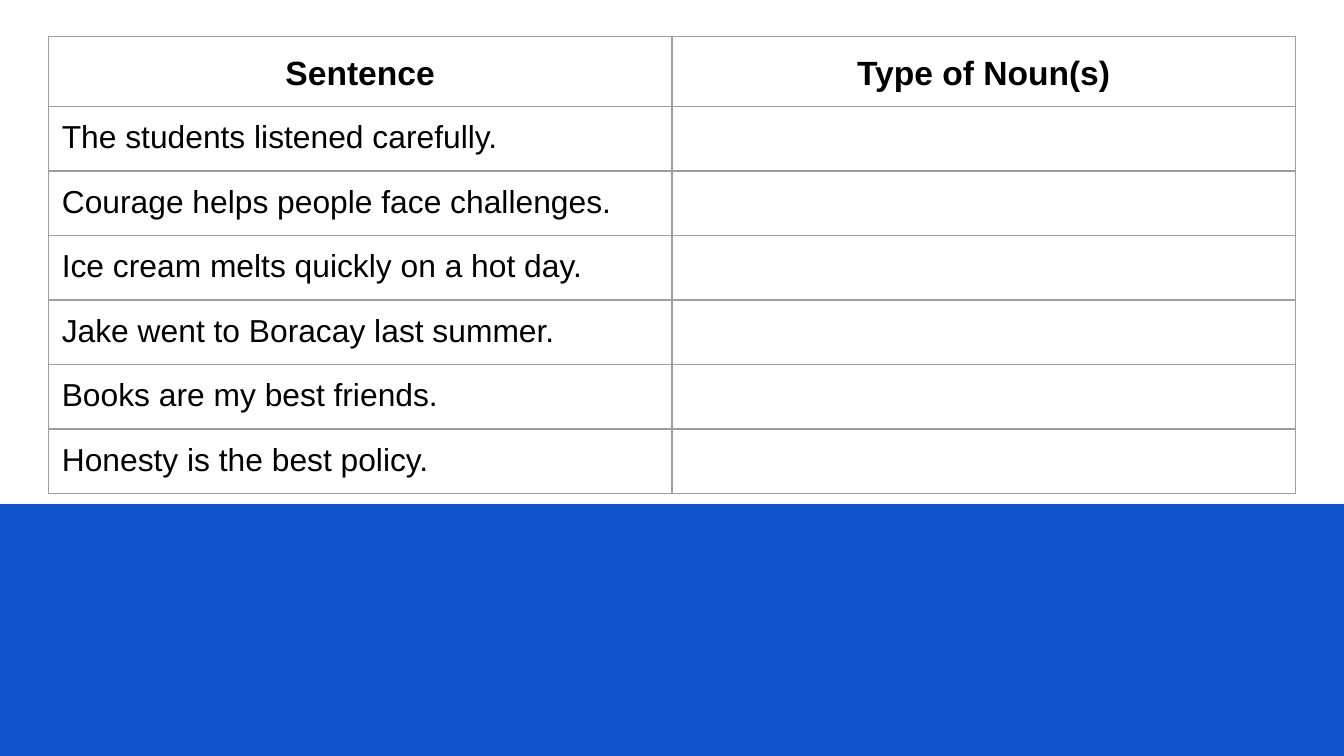
from lxml.etree import SubElement
from pptx import Presentation
from pptx.dml.color import RGBColor
from pptx.enum.shapes import MSO_SHAPE as Shape
from pptx.enum.text import MSO_ANCHOR as Anchor, PP_ALIGN as Align
from pptx.oxml.ns import qn
from pptx.util import Inches, Pt

BLUE = RGBColor(0x11, 0x55, 0xCC)
WHITE = RGBColor(0xFF, 0xFF, 0xFF)
BLACK = RGBColor(0, 0, 0)
GREY = RGBColor(0x9E, 0x9E, 0x9E)

# Slide (16:9) and table grid, in inches
WIDTH = 10
HEIGHT = WIDTH * 9 / 16
TABLE_LEFT, TABLE_TOP = 0.36, 0.27
COLUMN_WIDTH = WIDTH / 2 - TABLE_LEFT
HEADER_HEIGHT, ROW_HEIGHT = 0.52, 0.48

HEADERS = ("Sentence", "Type of Noun(s)")
SENTENCES = (
    "The students listened carefully.",
    "Courage helps people face challenges.",
    "Ice cream melts quickly on a hot day.",
    "Jake went to Boracay last summer.",
    "Books are my best friends.",
    "Honesty is the best policy.",
)

CELL_FORMAT = {f"margin_{side}": Inches(0.1) for side in ("left", "right", "top", "bottom")}
HEADER_PARAGRAPH = {"alignment": Align.CENTER, "line_spacing": 1.15}
HEADER_FONT = {"name": "Arial", "size": Pt(18), "bold": True}
BODY_PARAGRAPH = {"alignment": Align.LEFT}
BODY_FONT = {"name": "Arial", "size": Pt(17), "bold": False}


def apply_format(target, values):
    for name, value in values.items():
        setattr(target, name, value)


def add_band(slide, share):
    """Cover the top share of the slide with white."""
    band = slide.shapes.add_shape(Shape.RECTANGLE, 0, 0, Inches(WIDTH), Inches(HEIGHT * share))
    band.shadow.inherit = False
    band.fill.solid()
    band.fill.fore_color.rgb = WHITE
    band.line.fill.background()


def add_borders(cell):
    properties = cell._tc.get_or_add_tcPr()
    for side in ("lnL", "lnR", "lnT", "lnB"):
        line = SubElement(properties, qn(f"a:{side}"), w=str(Pt(0.75)))
        fill = SubElement(line, qn("a:solidFill"))
        SubElement(fill, qn("a:srgbClr"), val=str(GREY))


def write_cell(cell, text, paragraph_format, font_format):
    apply_format(cell, CELL_FORMAT)
    paragraph = cell.text_frame.paragraphs[0]
    apply_format(paragraph, paragraph_format)
    run = paragraph.add_run()
    run.text = text
    apply_format(run.font, font_format)
    run.font.color.rgb = BLACK


def add_noun_table(slide):
    row_count = len(SENTENCES) + 1
    table_height = HEADER_HEIGHT + ROW_HEIGHT * len(SENTENCES)
    table = slide.shapes.add_table(
        row_count, len(HEADERS), Inches(TABLE_LEFT), Inches(TABLE_TOP),
        Inches(COLUMN_WIDTH * len(HEADERS)), Inches(table_height)).table
    apply_format(table, {"first_row": False, "horz_banding": False})

    # Grid
    for column in table.columns:
        column.width = Inches(COLUMN_WIDTH)
    for index, row in enumerate(table.rows):
        row.height = Inches(ROW_HEIGHT if index else HEADER_HEIGHT)
    for cell in table.iter_cells():
        add_borders(cell)
        cell.fill.background()
        cell.vertical_anchor = Anchor.TOP

    # Wording; the answer column stays empty
    for column, header in enumerate(HEADERS):
        write_cell(table.cell(0, column), header, HEADER_PARAGRAPH, HEADER_FONT)
    for row, sentence in enumerate(SENTENCES, start=1):
        write_cell(table.cell(row, 0), sentence, BODY_PARAGRAPH, BODY_FONT)


def main():
    presentation = Presentation()
    apply_format(presentation, {"slide_width": Inches(WIDTH), "slide_height": Inches(HEIGHT)})
    slide = presentation.slides.add_slide(presentation.slide_layouts[6])

    # Blue background with a white upper part
    slide.background.fill.solid()
    slide.background.fill.fore_color.rgb = BLUE
    add_band(slide, 2 / 3)

    add_noun_table(slide)
    presentation.save("out.pptx")


if __name__ == "__main__":
    main()
